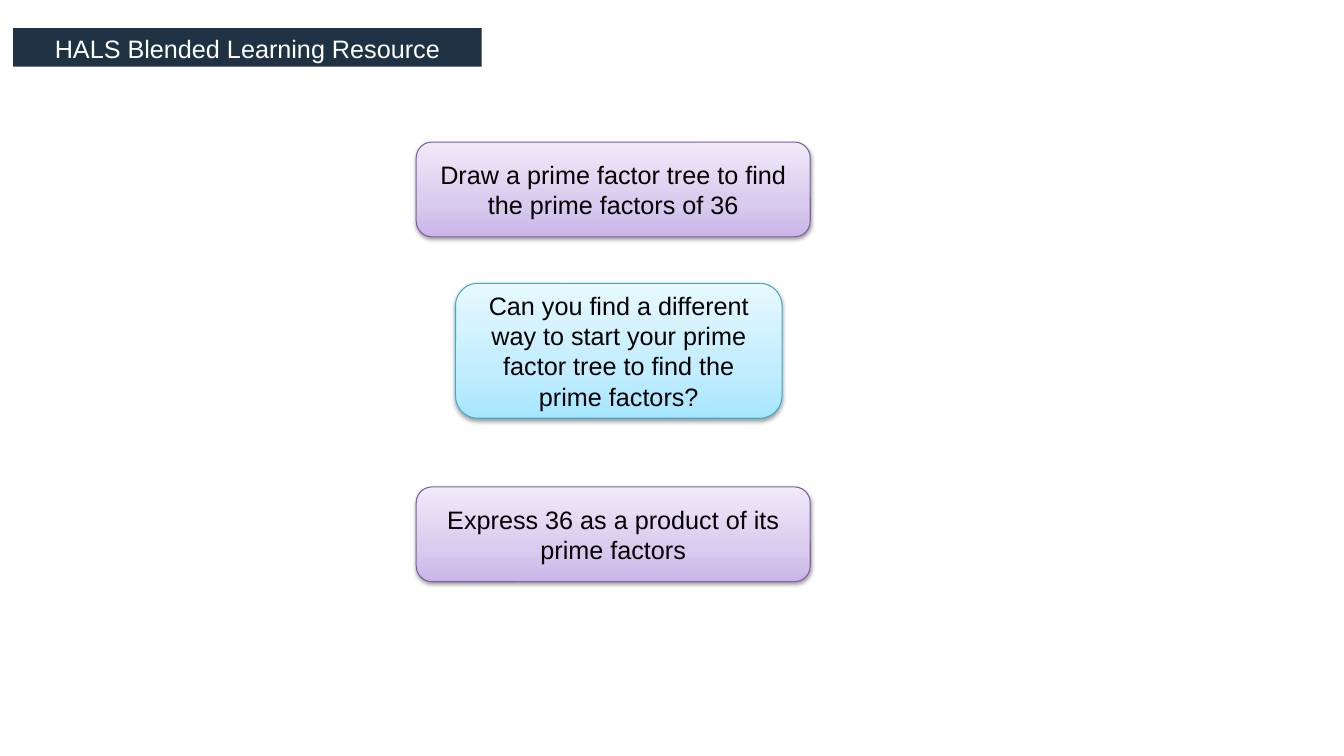
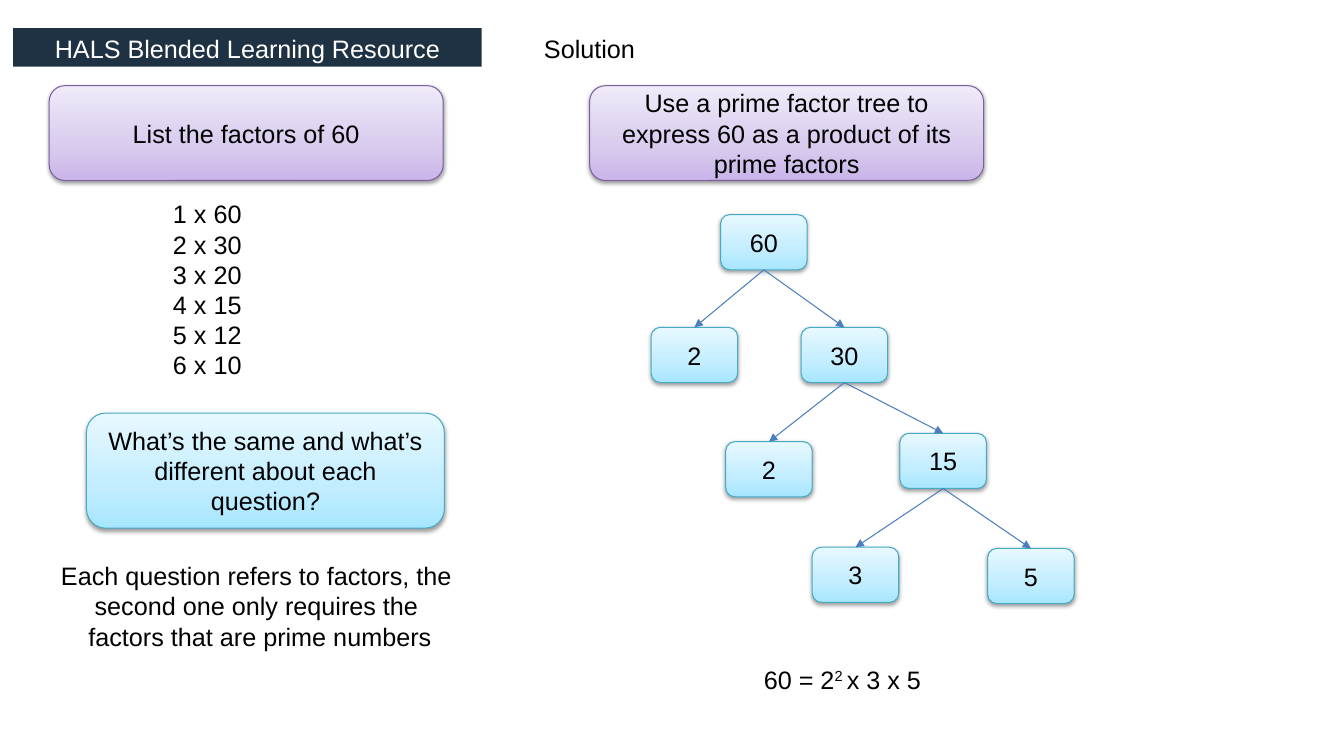
from copy import deepcopy

from lxml import etree
from pptx import Presentation
from pptx import util as u
from pptx.dml import color
from pptx.enum import shapes, text
from pptx.oxml import ns

FONT = "Arial"
BLACK, WHITE, NAVY, ARROW = "000000", "FFFFFF", "1F3244", "4B7EBC"
# Each box style: outline, then gradient stops from bottom to top
STYLES = {
    "task": ("7D60A0", ["C9B5E8", "D8CBEE", "F0EAF9"]),
    "prompt": ("46AAC5", ["A7E6FF", "C1EDFF", "E7F8FF"]),
}
STOP_POSITIONS = [0, 0.35, 1]
TASK_SIZE = (9.93, 2.39)
NODE_SIZE = (2.18, 1.39)
CENTRE, LEFT = text.PP_ALIGN.CENTER, text.PP_ALIGN.LEFT


def write(shape, paragraphs, hex_colour=BLACK, alignment=CENTRE):
    """Fill a shape with paragraphs, each one a list of runs."""
    frame = shape.text_frame
    for index, runs in enumerate(paragraphs):
        paragraph = frame.add_paragraph() if index else frame.paragraphs[0]
        paragraph.alignment = alignment
        for words in runs:
            run = paragraph.add_run()
            run.text = words
            run.font.name = FONT
            run.font.size = u.Pt(18)
            run.font.color.rgb = color.RGBColor.from_string(hex_colour)


def add_box(slide, style, words, left, top, width, height):
    """Add a rounded box with a gradient and a soft shadow."""
    outline, stop_colours = STYLES[style]
    box = slide.shapes.add_shape(shapes.MSO_SHAPE.ROUNDED_RECTANGLE,
                                 u.Cm(left), u.Cm(top), u.Cm(width), u.Cm(height))
    box.line.color.rgb = color.RGBColor.from_string(outline)
    box.line.width = u.Pt(0.75)

    box.fill.gradient()
    box.fill.gradient_angle = 90
    stop_list = box._element.spPr.find(".//" + ns.qn("a:gsLst"))
    stop_list.append(deepcopy(stop_list[0]))
    for stop, position, stop_colour in zip(box.fill.gradient_stops, STOP_POSITIONS, stop_colours):
        stop.position = position
        stop.color.rgb = color.RGBColor.from_string(stop_colour)

    box.shadow.inherit = False
    effects = box._element.spPr.find(ns.qn("a:effectLst"))
    shadow = etree.SubElement(effects, ns.qn("a:outerShdw"), blurRad="40000", dist="20000",
                              dir="5400000", rotWithShape="0")
    shadow_colour = etree.SubElement(shadow, ns.qn("a:srgbClr"), val=BLACK)
    etree.SubElement(shadow_colour, ns.qn("a:alpha"), val="38000")

    box.text_frame.word_wrap = True
    box.text_frame.vertical_anchor = text.MSO_ANCHOR.MIDDLE
    write(box, [[words]])
    return box


presentation = Presentation()
presentation.slide_width = u.Cm(33.87)
presentation.slide_height = u.Cm(19.05)

# Shared title band, set on the layout
layout = presentation.slide_layouts.get_by_name("Title Only")
band = layout.placeholders[0]
band.left, band.top, band.width, band.height = [u.Cm(n) for n in (0.33, 0.71, 11.81, 0.97)]
band.fill.solid()
band.fill.fore_color.rgb = color.RGBColor.from_string(NAVY)
band.text_frame.vertical_anchor = text.MSO_ANCHOR.TOP
band.text_frame.auto_size = text.MSO_AUTO_SIZE.NONE

question_slide, solution_slide = [presentation.slides.add_slide(layout) for _ in range(2)]
for slide in presentation.slides:
    write(slide.shapes.title, [["HALS Blended Learning Resource"]], WHITE)

# Slide 1: questions
add_box(question_slide, "task", "Draw a prime factor tree to find the prime factors of 36",
        10.49, 3.58, *TASK_SIZE)
add_box(question_slide, "prompt",
        "Can you find a different way to start your prime factor tree to find the prime factors?",
        11.48, 7.14, 8.23, 3.4)
add_box(question_slide, "task", "Express 36 as a product of its prime factors",
        10.49, 12.27, *TASK_SIZE)

# Slide 2: questions
add_box(solution_slide, "task", "List the factors of 60", 1.24, 2.16, *TASK_SIZE)
add_box(solution_slide, "task",
        "Use a prime factor tree to express 60 as a product of its prime factors",
        14.86, 2.16, *TASK_SIZE)
add_box(solution_slide, "prompt", "What’s the same and what’s different about each question?",
        2.18, 10.41, 9.02, 2.9)

# Slide 2: plain text, with the answers
factor_pairs = [[f"{factor} x {60 // factor}"] for factor in range(1, 7)]
comparison = [["Each question refers to factors, the "],
              ["second one only requires the "],
              ["factors that are prime numbers"]]
product = [["60 = 2", "2 ", "x 3 x 5"]]
for paragraphs, alignment, place in [
    ([["Solution"]], LEFT, (13.46, 0.71, 2.82, 1.02)),
    (factor_pairs, LEFT, (4.11, 4.88, 2.72, 4.88)),
    (comparison, CENTRE, (1.24, 14, 10.62, 3.33)),
    (product, LEFT, (19, 16.61, 4.62, 1.8)),
]:
    text_box = solution_slide.shapes.add_textbox(*[u.Cm(n) for n in place])
    text_box.text_frame.word_wrap = False
    write(text_box, paragraphs, alignment=alignment)
    if paragraphs is product:
        exponent = text_box.text_frame.paragraphs[0].runs[1]
        exponent.font._element.set("baseline", "30000")

# Slide 2: factor tree, each node with the index of its parent
tree = [
    ("60", 18.16, 5.41, None),
    ("2", 16.41, 8.25, 0),
    ("30", 20.19, 8.25, 0),
    ("2", 18.29, 11.13, 2),
    ("15", 22.68, 10.92, 2),
    ("3", 20.47, 13.79, 4),
    ("5", 24.89, 13.82, 4),
]
nodes = [add_box(solution_slide, "prompt", number, left, top, *NODE_SIZE)
         for number, left, top, _ in tree]
BOTTOM_SITE, TOP_SITE = 2, 0
for node, (_, _, _, parent) in zip(nodes, tree):
    if parent is None:
        continue
    arrow = solution_slide.shapes.add_connector(shapes.MSO_CONNECTOR.STRAIGHT, 0, 0, 0, 0)
    arrow.begin_connect(nodes[parent], BOTTOM_SITE)
    arrow.end_connect(node, TOP_SITE)
    arrow.line.color.rgb = color.RGBColor.from_string(ARROW)
    arrow.line.width = u.Pt(0.75)
    etree.SubElement(arrow.line._get_or_add_ln(), ns.qn("a:tailEnd"), type="triangle")
    etree.SubElement(arrow._element.spPr, ns.qn("a:effectLst"))

presentation.save("out.pptx")
